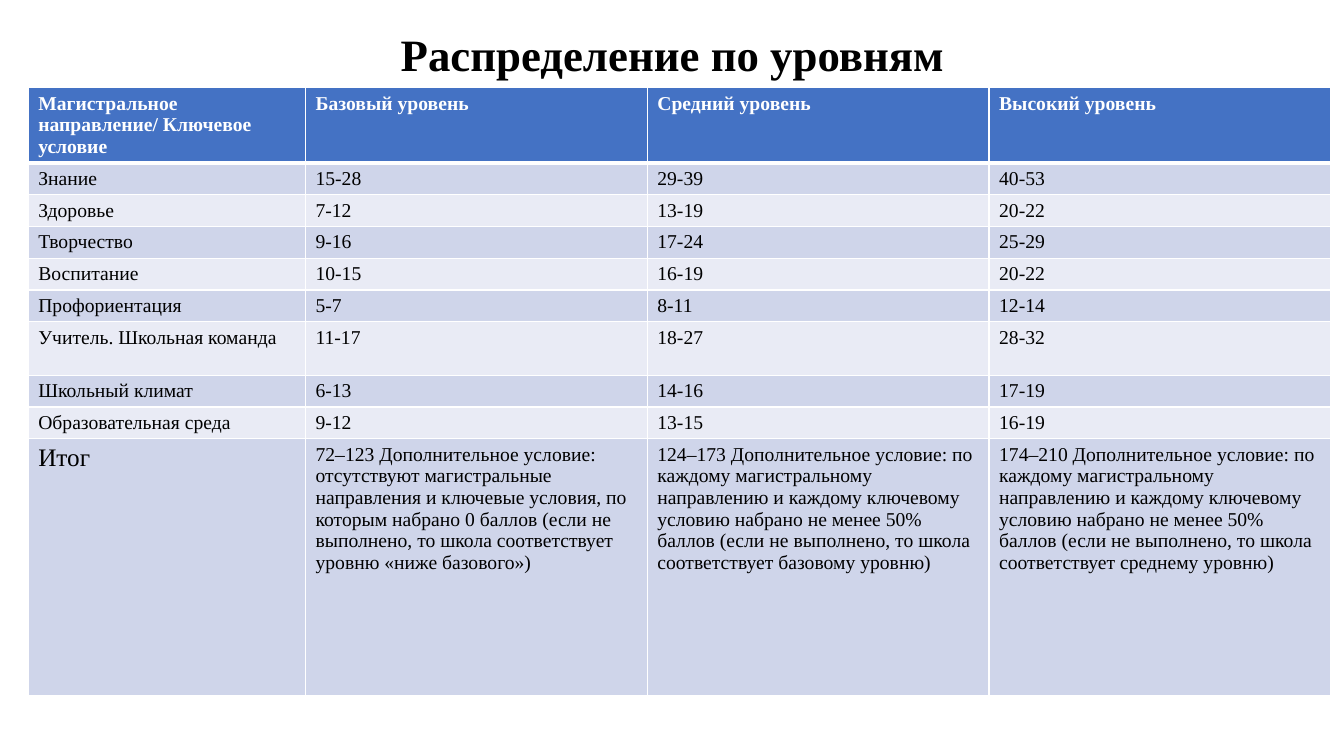
from lxml import etree
from pptx import Presentation
from pptx.dml.color import RGBColor
from pptx.enum.text import MSO_ANCHOR, PP_ALIGN
from pptx.oxml.ns import qn
from pptx.util import Inches, Pt

CENTER, MIDDLE = PP_ALIGN.CENTER, MSO_ANCHOR.MIDDLE

TITLE = "Распределение по уровням"
HEADER = ("Магистральное направление/ Ключевое условие",
          "Базовый уровень", "Средний уровень", "Высокий уровень")
SCORES = [
    ("Знание", "15-28", "29-39", "40-53"),
    ("Здоровье", "7-12", "13-19", "20-22"),
    ("Творчество", "9-16", "17-24", "25-29"),
    ("Воспитание", "10-15", "16-19", "20-22"),
    ("Профориентация", "5-7", "8-11", "12-14"),
    ("Учитель. Школьная команда", "11-17", "18-27", "28-32"),
    ("Школьный климат", "6-13", "14-16", "17-19"),
    ("Образовательная среда", "9-12", "13-15", "16-19"),
]
TOTAL = (
    "Итог",
    "72‒123 Дополнительное условие: отсутствуют магистральные направления и "
    "ключевые условия, по которым набрано 0 баллов (если не выполнено, то "
    "школа соответствует уровню «ниже базового»)",
    "124‒173 Дополнительное условие: по каждому магистральному направлению и "
    "каждому ключевому условию набрано не менее 50% баллов (если не выполнено, "
    "то школа соответствует базовому уровню)",
    "174‒210 Дополнительное условие: по каждому магистральному направлению и "
    "каждому ключевому условию набрано не менее 50% баллов (если не выполнено, "
    "то школа соответствует среднему уровню)",
)
ROWS = [HEADER, *SCORES, TOTAL]
COL_WIDTHS = [2.75] + [3.39] * 3
ROW_HEIGHTS = [0.71] + [0.3] * 5 + [0.53] + [0.3] * 2 + [2.55]

FONT = "Times New Roman"
COLORS = {"header": "4472C4", "odd": "CFD5EA", "even": "E9EBF5",
          "line": "FFFFFF", "text": "000000", "header_text": "FFFFFF"}


def rgb(name):
    return RGBColor.from_string(COLORS[name])


def format_font(p, size, color, bold):
    for r in p.runs:
        r.font.name, r.font.size, r.font.bold = FONT, Pt(size), bold
        r.font.color.rgb = rgb(color)


def set_borders(cell, widths):
    """Draw the cell's edges; widths maps L, R, T, B to points."""
    tc_pr = cell._tc.get_or_add_tcPr()
    for i, (side, width) in enumerate(widths.items()):
        ln = etree.Element(qn(f"a:ln{side}"), w=str(Pt(width)))
        fill = etree.SubElement(ln, qn("a:solidFill"))
        etree.SubElement(fill, qn("a:srgbClr"), val=COLORS["line"])
        tc_pr.insert(i, ln)


prs = Presentation()
prs.slide_width, prs.slide_height = Inches(13.33), Inches(7.5)
slide = prs.slides.add_slide(prs.slide_layouts[5])

title = slide.shapes.title
title.left, title.top = Inches(0.92), Inches(0.4)
title.width, title.height = Inches(11.5), Inches(0.34)
tf = title.text_frame
tf.text = TITLE
tf.vertical_anchor = MIDDLE
p = tf.paragraphs[0]
p.alignment, p.line_spacing = CENTER, 0.9
format_font(p, 32, "text", True)

table = slide.shapes.add_table(
    len(ROWS), len(HEADER), Inches(0.28), Inches(0.87),
    Inches(sum(COL_WIDTHS)), Inches(sum(ROW_HEIGHTS))).table
for column, width in zip(table.columns, COL_WIDTHS):
    column.width = Inches(width)
for row, height in zip(table.rows, ROW_HEIGHTS):
    row.height = Inches(height)

for i, texts in enumerate(ROWS):
    is_header = i == 0
    fill = "header" if is_header else "odd" if i % 2 else "even"
    for j, text in enumerate(texts):
        cell = table.cell(i, j)
        cell.text = text
        cell.fill.solid()
        cell.fill.fore_color.rgb = rgb(fill)
        set_borders(cell, {"L": 1, "R": 1, "T": 3 if i == 1 else 1,
                           "B": 3 if is_header else 1})
        format_font(cell.text_frame.paragraphs[0],
                    18 if text == TOTAL[0] else 14,
                    "header_text" if is_header else "text", is_header)

prs.save("out.pptx")
